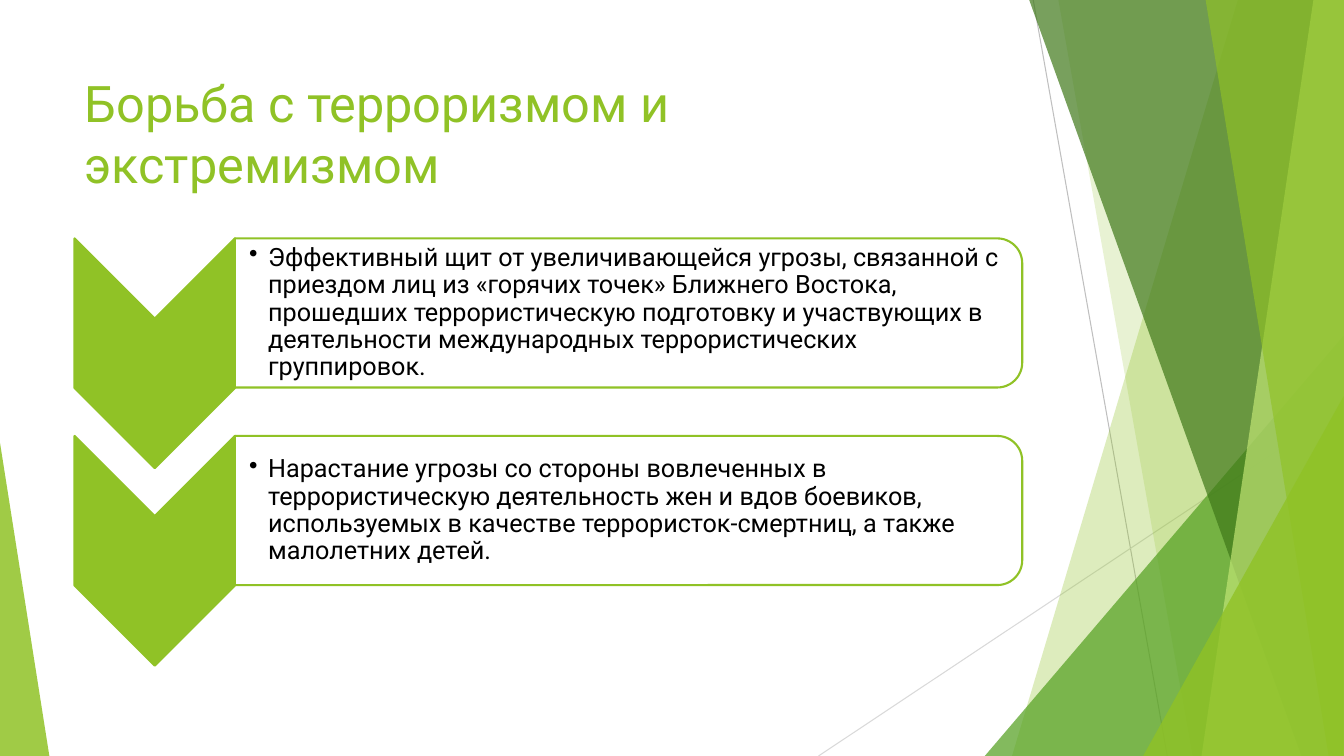
from lxml import etree
from pptx import Presentation
from pptx import util as u
from pptx.dml.color import RGBColor
from pptx.enum import shapes, text
from pptx.oxml.ns import qn

COLORS = {
    "lime": "90C226", "green": "54A021", "forest": "3F7819", "pale": "C0E474",
    "white": "FFFFFF", "black": "000000", "gray": "BFBFBF", "silver": "D9D9D9",
}
COLUMNS, ROWS = 133.33, 75


class Deck:
    """Draws styled elements on one slide, placed by grid columns and rows."""

    font = "Roboto"

    def __init__(self):
        self.prs = Presentation()
        self.prs.slide_width, self.prs.slide_height = u.Inches(13.33), u.Inches(7.5)
        self.slide = self.prs.slides.add_slide(self.prs.slide_layouts[6])
        self.shapes = self.slide.shapes

    def x(self, columns):
        return round(self.prs.slide_width * columns / COLUMNS)

    def y(self, rows):
        return round(self.prs.slide_height * rows / ROWS)

    def frame(self, left, top, width, height):
        return self.x(left), self.y(top), self.x(width), self.y(height)

    def paint(self, shape, fill, opacity=100, outline=None):
        shape.shadow.inherit = False
        shape.fill.solid()
        shape.fill.fore_color.rgb = RGBColor.from_string(COLORS[fill])
        if opacity < 100:
            tint = shape.element.spPr.find(qn("a:solidFill"))[0]
            etree.SubElement(tint, qn("a:alpha"), val=str(opacity * 1000))
        if outline:
            shape.line.color.rgb = RGBColor.from_string(COLORS[outline])
            shape.line.width = u.Pt(1.5)
        else:
            shape.line.fill.background()

    def ray(self, start, end, color):
        ray = self.shapes.add_connector(
            shapes.MSO_CONNECTOR.STRAIGHT,
            self.x(start[0]), self.y(start[1]), self.x(end[0]), self.y(end[1]))
        ray.line.color.rgb = RGBColor.from_string(COLORS[color])
        ray.line.width = u.Pt(0.75)
        etree.SubElement(ray.element.spPr, qn("a:effectLst"))

    def shard(self, top, bottom, color, opacity):
        builder = self.shapes.build_freeform(self.x(top), 0)
        corners = [(COLUMNS, 0), (COLUMNS, ROWS), (bottom, ROWS)]
        builder.add_line_segments([(self.x(c), self.y(r)) for c, r in corners])
        self.paint(builder.convert_to_shape(), color, opacity)

    def wedge(self, left, top, width, apex, color, opacity):
        wedge = self.shapes.add_shape(
            shapes.MSO_SHAPE.ISOSCELES_TRIANGLE,
            *self.frame(left, top, width, ROWS - top))
        wedge.adjustments[0] = apex
        self.paint(wedge, color, opacity)

    def turned(self, preset, left, top, width, height, fill, opacity=100):
        shift = (width - height) / 2
        shape = self.shapes.add_shape(
            preset, *self.frame(left + shift, top - shift, height, width))
        shape.rotation = 90
        self.paint(shape, fill, opacity, "lime")

    def label(self, wording, box, size, color, anchor, insets):
        frame = self.shapes.add_textbox(*self.frame(*box)).text_frame
        frame.word_wrap = True
        frame.vertical_anchor = anchor
        (frame.margin_left, frame.margin_top,
         frame.margin_right, frame.margin_bottom) = map(u.Inches, insets)
        paragraph = frame.paragraphs[0]
        paragraph.text = wording
        paragraph.font.name, paragraph.font.size = self.font, u.Pt(size)
        paragraph.font.color.rgb = RGBColor.from_string(COLORS[color])
        return paragraph

    def title(self, wording):
        self.label(wording, (7.4, 6.7, 94, 14.4), 36, "lime",
                   text.MSO_ANCHOR.TOP, (0.1, 0.05, 0.1, 0.05))

    def threat(self, wording, top):
        self.turned(shapes.MSO_SHAPE.CHEVRON, 7.4, top, 15.9, 22.8, "lime")
        self.turned(shapes.MSO_SHAPE.ROUND_2_SAME_RECTANGLE,
                    23.3, top, 78.1, 14.8, "white", 90)
        point = self.label(wording, (23.3, top + 0.75, 77.4, 13.3), 18, "black",
                           text.MSO_ANCHOR.MIDDLE, (0.14, 0.01, 0.01, 0.01))
        point.line_spacing = 0.9
        point.space_after = u.Pt(2.7)
        layout = point._p.get_or_add_pPr()
        indent = u.Inches(0.19)
        layout.set("marL", str(indent))
        layout.set("indent", str(-indent))
        bullet = etree.Element(qn("a:buChar"), char="•")
        layout.find(qn("a:spcAft")).addnext(bullet)


def main():
    deck = Deck()
    deck.ray((102.5, 0), (115.8, ROWS), "gray")
    deck.ray((COLUMNS, 40.3), (81.2, ROWS), "silver")
    deck.shard(122.8, 100.4, "lime", 30)
    deck.shard(105, 118.3, "lime", 20)
    deck.wedge(97.7, 33.3, 35.6, 1, "green", 72)
    deck.shard(102.1, 129.1, "forest", 70)
    deck.shard(130.3, 119.2, "pale", 70)
    deck.shard(119.6, 131.8, "lime", 65)
    deck.wedge(113.4, 39.3, 19.9, 1, "lime", 80)
    deck.wedge(0, 43.9, 4.9, 0, "lime", 85)

    deck.title("Борьба с терроризмом и экстремизмом")
    threats = [
        "Эффективный щит от увеличивающейся угрозы, связанной с приездом лиц из "
        "«горячих точек» Ближнего Востока, прошедших террористическую подготовку "
        "и участвующих в деятельности международных террористических группировок.",
        "Нарастание угрозы со стороны вовлеченных в террористическую деятельность "
        "жен и вдов боевиков, используемых в качестве террористок-смертниц, "
        "а также малолетних детей.",
    ]
    for row, wording in enumerate(threats):
        deck.threat(wording, 23.65 + 19.6 * row)
    deck.prs.save("out.pptx")


if __name__ == "__main__":
    main()
